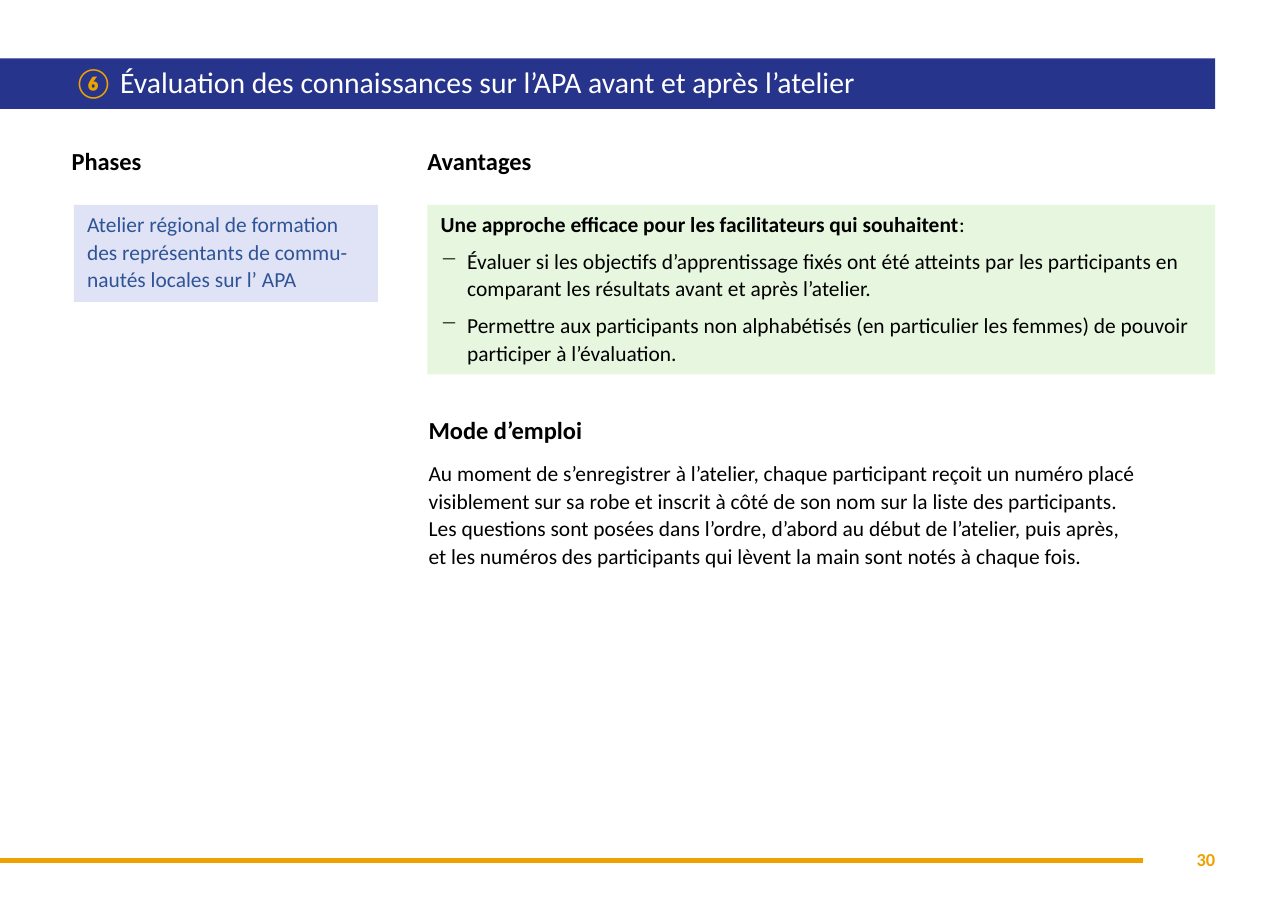
from lxml.etree import SubElement
from pptx import Presentation
from pptx.dml.color import RGBColor
from pptx.enum.shapes import MSO_CONNECTOR, MSO_SHAPE
from pptx.enum.text import MSO_ANCHOR, MSO_AUTO_SIZE, PP_ALIGN
from pptx.oxml.ns import qn
from pptx.util import Emu, Pt

FONT = "Calibri"
BLACK, WHITE, GOLD, NAVY = "000000", "FFFFFF", "EEA100", "27348B"
PALE_BLUE, STEEL_BLUE, PALE_GREEN = "E0E3F6", "2F5496", "DEF3D2"
BODY_LEADING = Pt(18)
HEADING_LEADING = 0.9
BOX_INSETS = (12, 4, 12, 8)


def px(length):
    """Convert px, 100 to the inch, to EMU."""
    return Emu(length * 9144)


def rgb(colour):
    return RGBColor.from_string(colour)


class Page:
    def __init__(self, slide):
        self.slide = slide

    def frame(self, shape, insets=(0, 0, 0, 0), anchor=MSO_ANCHOR.TOP):
        frame = shape.text_frame
        frame.word_wrap = True
        frame.auto_size = MSO_AUTO_SIZE.NONE
        frame.vertical_anchor = anchor
        (frame.margin_left, frame.margin_top,
         frame.margin_right, frame.margin_bottom) = map(px, insets)
        return frame

    def paragraph(self, frame, runs, size, leading, before=0, after=0,
                  align=PP_ALIGN.LEFT, dash=False):
        """Fill the empty first paragraph or add one; runs are (text, colour, bold)."""
        first = frame.paragraphs[0]
        paragraph = frame.add_paragraph() if first.runs else first
        if dash:
            properties = paragraph._p.get_or_add_pPr()
            properties.set("marL", str(px(24)))
            properties.set("indent", str(px(-24)))
            SubElement(properties, qn("a:buChar")).set("char", "−")
        paragraph.alignment = align
        paragraph.line_spacing = leading
        paragraph.space_before, paragraph.space_after = Pt(before), Pt(after)
        for text, colour, bold in runs:
            for number, line in enumerate(text.split("\n")):
                if number:
                    paragraph.add_line_break()
                run = paragraph.add_run()
                run.text = line
                run.font.name, run.font.size = FONT, Pt(size)
                run.font.bold = bold
                run.font.color.rgb = rgb(colour)

    def title(self, area, fill, runs):
        band = self.slide.shapes.title
        band.left, band.top, band.width, band.height = map(px, area)
        band.fill.solid()
        band.fill.fore_color.rgb = rgb(fill)
        frame = self.frame(band, (67, 4, 39, 4), MSO_ANCHOR.MIDDLE)
        self.paragraph(frame, runs, 19.4, HEADING_LEADING)

    def text_box(self, area):
        return self.frame(self.slide.shapes.add_textbox(*map(px, area)))

    def heading(self, area, text):
        frame = self.text_box(area)
        self.paragraph(frame, [(text, BLACK, True)], 16, HEADING_LEADING)
        return frame

    def panel(self, area, fill, opacity=100):
        panel = self.slide.shapes.add_shape(MSO_SHAPE.RECTANGLE, *map(px, area))
        panel.shadow.inherit = False
        panel.line.fill.background()
        panel.fill.solid()
        panel.fill.fore_color.rgb = rgb(fill)
        if opacity < 100:
            colour = panel.element.spPr.find(qn("a:solidFill"))[0]
            SubElement(colour, qn("a:alpha")).set("val", str(opacity * 1000))
        return self.frame(panel, BOX_INSETS)

    def rule(self, left, right, top, colour, width):
        line = self.slide.shapes.add_connector(
            MSO_CONNECTOR.STRAIGHT, px(left), px(top), px(right), px(top))
        line.line.color.rgb = rgb(colour)
        line.line.width = Pt(width)
        SubElement(line.element.spPr, qn("a:effectLst"))


def main():
    deck = Presentation()
    deck.slide_width, deck.slide_height = px(1169), px(827)
    page = Page(deck.slides.add_slide(deck.slide_layouts.get_by_name("Title Only")))

    page.rule(0, 1037, 781, GOLD, 3)
    page_number = page.text_box((1029, 770, 74, 20))
    page.paragraph(page_number, [("30", GOLD, True)], 12, 1.0, align=PP_ALIGN.RIGHT)

    page.title((0, 53, 1103, 46), NAVY, [
        ("⑥ ", GOLD, True),
        ("Évaluation des connaissances sur l’APA avant et après l’atelier", WHITE, False),
    ])

    page.heading((65, 136, 300, 24), "Phases")
    phase = page.panel((67, 186, 276, 88), PALE_BLUE)
    page.paragraph(phase, [
        ("Atelier régional de formation des représentants de commu-nautés "
         "locales sur l’ APA", STEEL_BLUE, False),
    ], 14, BODY_LEADING)

    page.heading((388, 136, 353, 32), "Avantages")
    advantages = page.panel((388, 186, 715, 154), PALE_GREEN, opacity=70)
    page.paragraph(advantages, [
        ("Une approche efficace pour les facilitateurs qui souhaitent", BLACK, True),
        (":", BLACK, False),
    ], 14, BODY_LEADING, after=6)
    for advantage in (
        "Évaluer si les objectifs d’apprentissage fixés ont été atteints par les "
        "participants en comparant les résultats avant et après l’atelier.",
        "Permettre aux participants non alphabétisés (en particulier les femmes) "
        "de pouvoir participer à l’évaluation.",
    ):
        page.paragraph(advantages, [(advantage, BLACK, False)], 14, BODY_LEADING,
                       after=6, dash=True)

    instructions = page.heading((389, 380, 715, 175), "Mode d’emploi")
    page.paragraph(instructions, [
        ("Au moment de s’enregistrer à l’atelier, chaque participant reçoit un numéro "
         "placé visiblement sur sa robe et inscrit à côté de son nom sur la liste des "
         "participants.\n"
         "Les questions sont posées dans l’ordre, d’abord au début de l’atelier, "
         "puis après,\n"
         "et les numéros des participants qui lèvent la main sont notés à chaque fois.",
         BLACK, False),
    ], 14, BODY_LEADING, before=8.8)

    deck.save("out.pptx")


if __name__ == "__main__":
    main()
